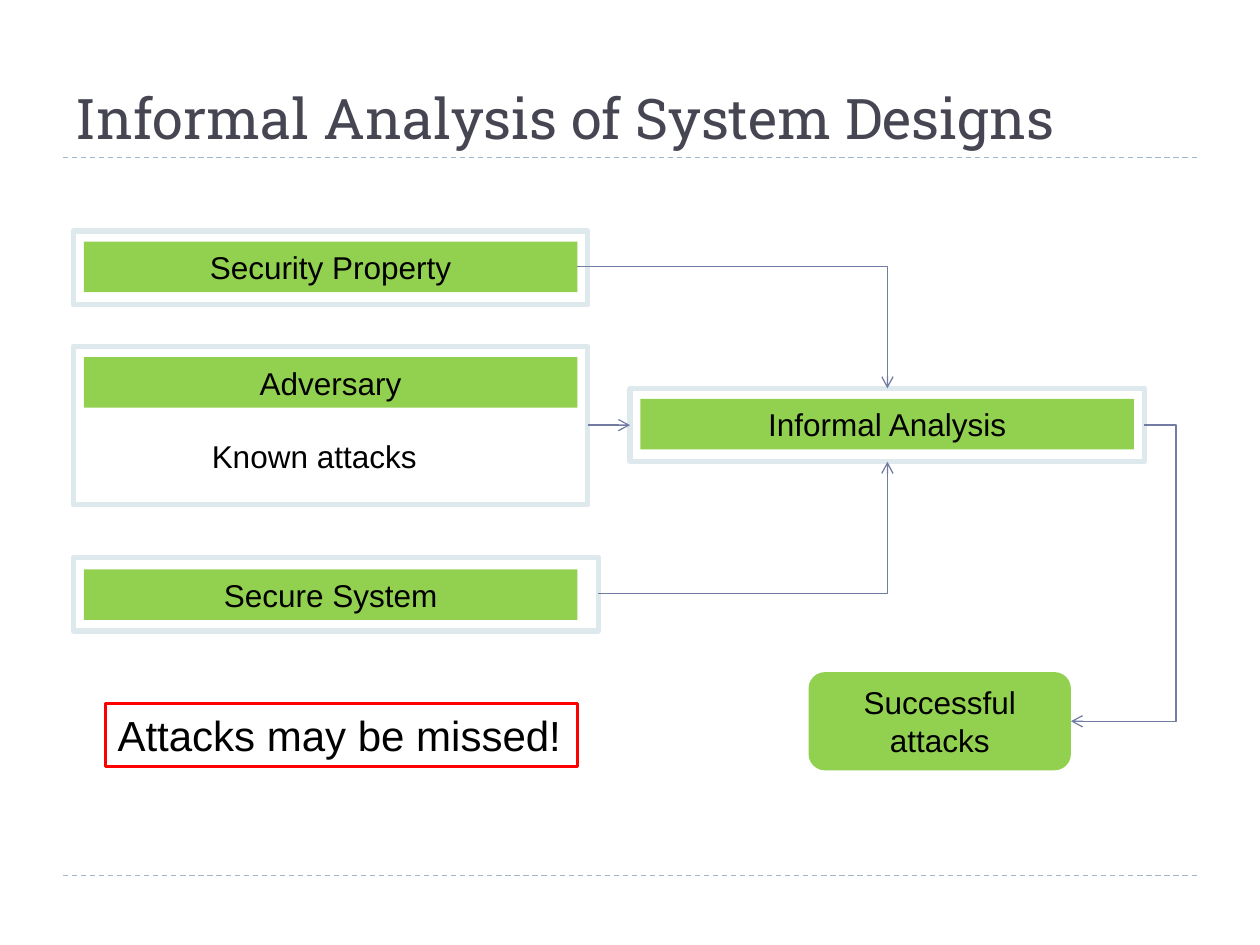
from lxml.etree import SubElement
from pptx import Presentation
from pptx.dml.color import RGBColor
from pptx.enum.dml import MSO_LINE
from pptx.enum.shapes import MSO_CONNECTOR, MSO_SHAPE
from pptx.enum.text import MSO_ANCHOR, MSO_AUTO_SIZE, PP_ALIGN
from pptx.oxml.ns import qn
from pptx.util import Cm, Pt

TITLE_INK = RGBColor(0x46, 0x46, 0x53)
INK = RGBColor(0x00, 0x00, 0x00)
GREEN = RGBColor(0x92, 0xD0, 0x50)
FRAME = RGBColor(0xDD, 0xE9, 0xEC)
ARROW = RGBColor(0x72, 0x7C, 0xA3)
RULE = RGBColor(0x9F, 0xB8, 0xCD)
RED = RGBColor(0xFF, 0x00, 0x00)


def write(target, text, size=18, font="Arial", color=INK, align=PP_ALIGN.CENTER,
          anchor=MSO_ANCHOR.MIDDLE, wrap=True):
    frame = target.text_frame
    frame.auto_size = MSO_AUTO_SIZE.NONE
    frame.word_wrap = wrap
    frame.vertical_anchor = anchor
    paragraph = frame.paragraphs[0]
    paragraph.alignment = align
    run = paragraph.add_run()
    run.text = text
    run.font.size = Pt(size)
    run.font.name = font
    run.font.color.rgb = color


class Diagram:
    label_width, label_height = 9.95, 1.02
    inset = 0.21

    def __init__(self, slide):
        self.slide = slide

    def title(self, text):
        heading = self.slide.shapes.title
        heading.left, heading.top = Cm(1.27), Cm(0.43)
        heading.width, heading.height = Cm(22.86), Cm(2.74)
        write(heading, text, size=32, font="Roboto Slab", color=TITLE_INK,
              align=PP_ALIGN.LEFT, anchor=MSO_ANCHOR.BOTTOM)

    def box(self, left, top, width, height, fill=None, line=None, weight=3,
            kind=MSO_SHAPE.RECTANGLE):
        box = self.slide.shapes.add_shape(kind, Cm(left), Cm(top), Cm(width), Cm(height))
        box.shadow.inherit = False
        if fill is None:
            box.fill.background()
        else:
            box.fill.solid()
            box.fill.fore_color.rgb = fill
        if line is None:
            box.line.fill.background()
        else:
            box.line.color.rgb = line
            box.line.width = Pt(weight)
        return box

    def framed_label(self, text, left, top, width=10.37, height=1.48, drop=inset):
        label = self.box(left + self.inset, top + drop,
                         self.label_width, self.label_height, fill=GREEN)
        write(label, text)
        self.box(left, top, width, height, line=FRAME)

    def note(self, text, left, top, width, height):
        note = self.slide.shapes.add_textbox(Cm(left), Cm(top), Cm(width), Cm(height))
        write(note, text, align=PP_ALIGN.LEFT, anchor=MSO_ANCHOR.TOP, wrap=False)

    def line(self, start, end, color, kind=MSO_CONNECTOR.STRAIGHT):
        line = self.slide.shapes.add_connector(kind, *map(Cm, start + end))
        line.line.color.rgb = color
        line.line.width = Pt(0.75)
        SubElement(line._element.spPr, qn("a:effectLst"))
        return line

    def rule(self, y):
        self.line((1.27, y), (24.13, y), RULE).line.dash_style = MSO_LINE.DASH

    def arrow(self, start, end, preset=None, bend=None):
        kind = MSO_CONNECTOR.ELBOW if preset else MSO_CONNECTOR.STRAIGHT
        arrow = self.line(start, end, ARROW, kind)
        SubElement(arrow.line._get_or_add_ln(), qn("a:tailEnd"), type="arrow")
        if preset:
            arrow._element.spPr.find(qn("a:prstGeom")).set("prst", preset)
        if bend is not None:
            arrow.adjustments[0] = bend if hasattr(arrow, "adjustments") else None
        return arrow

    def detour(self, start, end, bend):
        arrow = self.arrow(start, end, "bentConnector3")
        geometry = arrow._element.spPr.find(qn("a:prstGeom"))
        guides = geometry.find(qn("a:avLst"))
        if guides is None:
            guides = SubElement(geometry, qn("a:avLst"))
        SubElement(guides, qn("a:gd"), name="adj1", fmla=f"val {round(bend * 100000)}")


def main():
    presentation = Presentation()
    presentation.slide_width, presentation.slide_height = Cm(25.4), Cm(19.05)
    slide = presentation.slides.add_slide(presentation.slide_layouts[5])
    diagram = Diagram(slide)

    for y in (17.65, 3.18):
        diagram.rule(y)
    diagram.title("Informal Analysis of System Designs")

    inputs_left, analysis_left = 1.48, 12.7
    diagram.framed_label("Security Property", inputs_left, 4.66)
    diagram.framed_label("Secure System", inputs_left, 11.24, width=10.58, drop=0.24)
    diagram.framed_label("Adversary", inputs_left, 6.99, height=3.18)
    diagram.framed_label("Informal Analysis", analysis_left, 7.83)

    analysis_center, analysis_middle = 17.89, 8.57
    diagram.arrow((11.85, analysis_middle), (analysis_left, analysis_middle))
    diagram.arrow((11.64, 5.38), (analysis_center, 7.83), "bentConnector2")
    diagram.arrow((12.06, 11.96), (analysis_center, 9.31), "bentConnector2")

    result = diagram.box(16.3, 13.55, 5.29, 1.98, fill=GREEN,
                         kind=MSO_SHAPE.ROUNDED_RECTANGLE)
    write(result, "Successful attacks")
    diagram.detour((23.07, analysis_middle), (21.59, 14.54), bend=-0.43)

    warning = diagram.box(2.12, 14.18, 9.53, 1.27, line=RED, weight=1.75)
    write(warning, "Attacks may be missed!", size=24, align=PP_ALIGN.LEFT)
    diagram.note("Known attacks", 4.02, 8.68, 4.67, 1.02)

    presentation.save("out.pptx")


if __name__ == "__main__":
    main()
